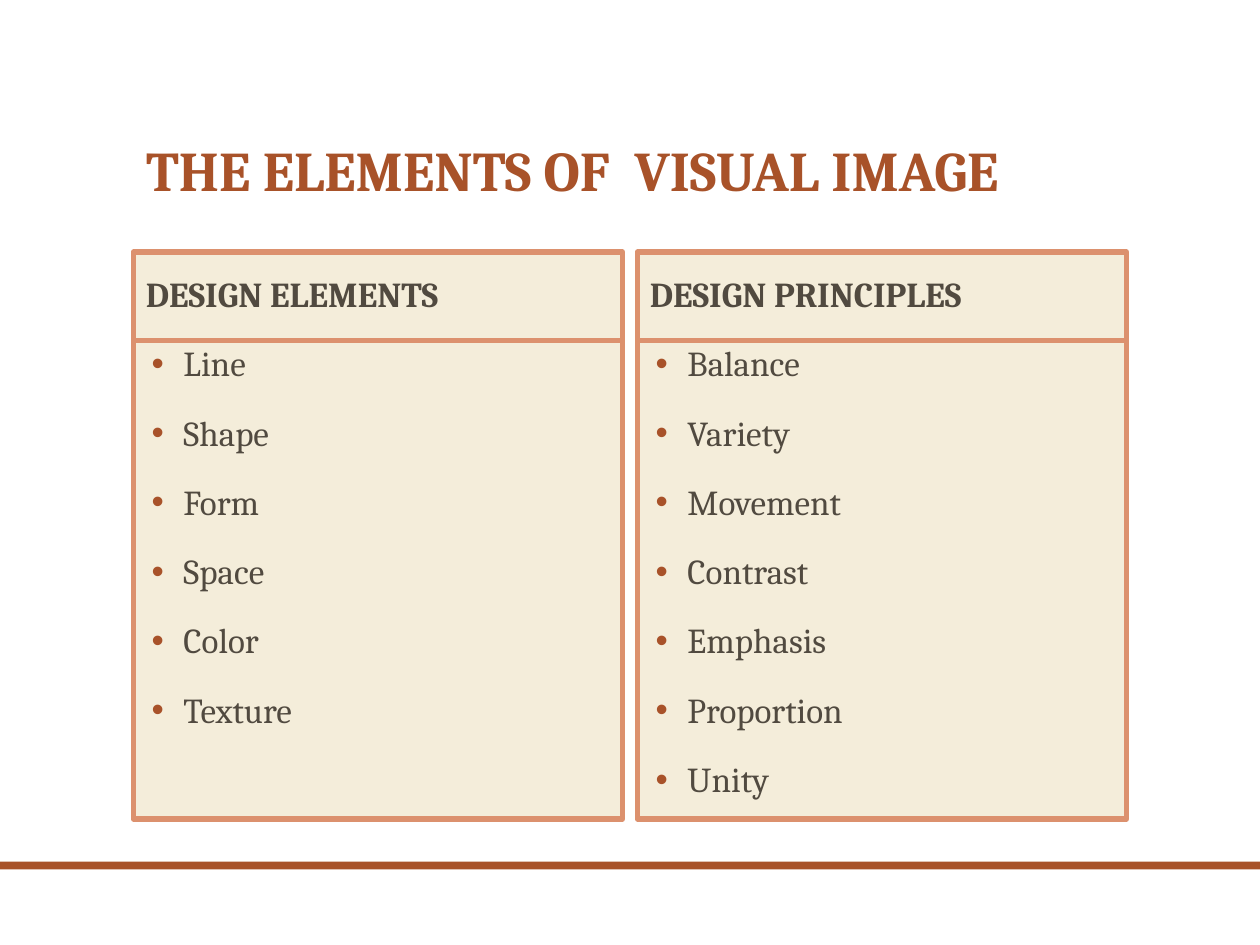
from lxml.etree import SubElement
from pptx import Presentation
from pptx.dml.color import RGBColor
from pptx.enum.shapes import MSO_SHAPE
from pptx.enum.text import MSO_ANCHOR, MSO_AUTO_SIZE, PP_ALIGN
from pptx.oxml.ns import qn
from pptx.util import Cm, Pt

RUST = "A85229"
SALMON = "DC916E"
CREAM = "F4EDDA"
BROWN = "514A40"


def color(hex_value):
    return RGBColor.from_string(hex_value)


def write_text(shape, lines, size=20, hex_color=BROWN, bold=False,
               anchor=MSO_ANCHOR.TOP, bullet=False, gap=0):
    frame = shape.text_frame
    frame.word_wrap = True
    frame.auto_size = MSO_AUTO_SIZE.NONE
    frame.vertical_anchor = anchor
    frame.text = "\n".join(lines)
    for index, paragraph in enumerate(frame.paragraphs):
        paragraph.alignment = PP_ALIGN.LEFT
        paragraph.line_spacing = 0.9
        paragraph.space_before = Pt(gap if index else 0)
        if bullet:
            properties = paragraph._p.get_or_add_pPr()
            properties.set("marL", str(Cm(0.76)))
            properties.set("indent", str(Cm(-0.64)))
            bullet_color = SubElement(properties, qn("a:buClr"))
            SubElement(bullet_color, qn("a:srgbClr"), val=RUST)
            SubElement(properties, qn("a:buFont"), typeface="Arial")
            SubElement(properties, qn("a:buChar"), char="•")
        for run in paragraph.runs:
            run.font.name = "Cambria"
            run.font.size = Pt(size)
            run.font.bold = bold
            run.font.color.rgb = color(hex_color)


presentation = Presentation()
presentation.slide_width = Cm(25.4)
presentation.slide_height = Cm(19.05)
slide = presentation.slides.add_slide(presentation.slide_layouts[5])

footer_bar = slide.shapes.add_shape(
    MSO_SHAPE.RECTANGLE, 0, Cm(17.37), presentation.slide_width, Cm(0.16))
footer_bar.shadow.inherit = False
footer_bar.fill.solid()
footer_bar.fill.fore_color.rgb = color(RUST)
footer_bar.line.fill.background()

title = slide.shapes.title
title.left, title.top, title.width, title.height = Cm(2.69), Cm(1.07), Cm(20.02), Cm(3.17)
write_text(title, ["THE ELEMENTS OF  VISUAL IMAGE"], size=32, hex_color=RUST,
           bold=True, anchor=MSO_ANCHOR.BOTTOM)

columns = {
    "DESIGN ELEMENTS": ["Line", "Shape", "Form", "Space", "Color", "Texture"],
    "DESIGN PRINCIPLES": ["Balance", "Variety", "Movement", "Contrast",
                          "Emphasis", "Proportion", "Unity"],
}
heading_format = {"bold": True, "anchor": MSO_ANCHOR.MIDDLE}
list_format = {"bullet": True, "gap": 18}

for column, (heading, items) in enumerate(columns.items()):
    left = Cm(2.69 + column * 10.16)
    for top, height, lines, text_format in (
        (5.08, 1.78, [heading], heading_format),
        (6.86, 9.65, items, list_format),
    ):
        panel = slide.shapes.add_shape(
            MSO_SHAPE.RECTANGLE, left, Cm(top), Cm(9.86), Cm(height))
        panel.shadow.inherit = False
        panel.fill.solid()
        panel.fill.fore_color.rgb = color(CREAM)
        panel.line.color.rgb = color(SALMON)
        panel.line.width = Pt(3)
        write_text(panel, lines, **text_format)

presentation.save("out.pptx")
